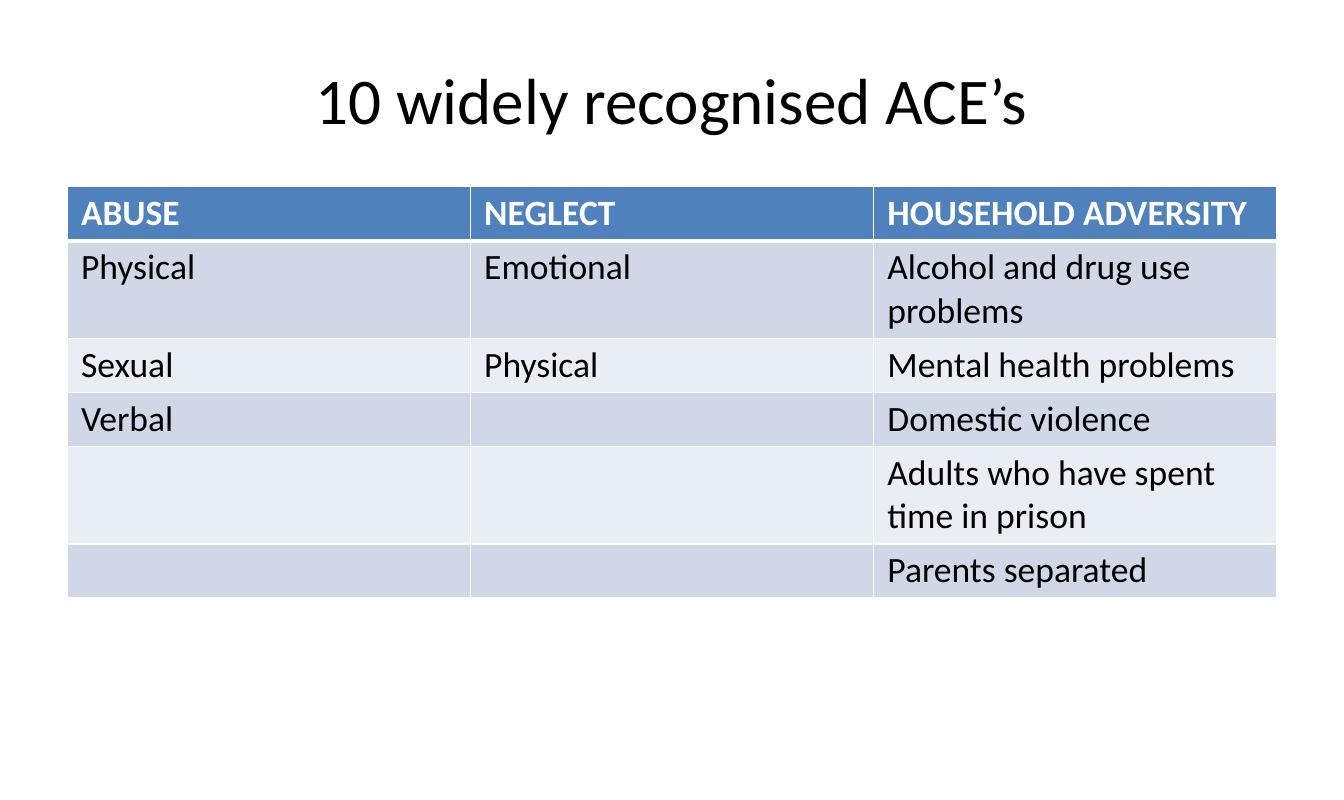
import pptx
import pptx.dml.color
import pptx.enum.text
import pptx.oxml
import pptx.oxml.ns
import pptx.util

PX = 9144  # 100 px to the inch
COLORS = {
    "white": "FFFFFF",
    "black": "000000",
    "header": "4F81BD",
    "odd row": "D0D8E8",
    "even row": "E9EDF4",
}
FONT = "Calibri"
ROW_HEIGHT = 41
ACES = [
    ["ABUSE", "NEGLECT", "HOUSEHOLD ADVERSITY"],
    ["Physical", "Emotional", "Alcohol and drug use problems"],
    ["Sexual", "Physical", "Mental health problems"],
    ["Verbal", "", "Domestic violence"],
    ["", "", "Adults who have spent time in prison"],
    ["", "", "Parents separated"],
]


def px(length):
    return pptx.util.Emu(length * PX)


def rgb(name):
    return pptx.dml.color.RGBColor.from_string(COLORS[name])


def set_font(paragraph, size, color, bold=False):
    paragraph.font.name = FONT
    paragraph.font.size = pptx.util.Pt(size)
    paragraph.font.bold = bold
    paragraph.font.color.rgb = rgb(color)


def add_title(slide, box, text):
    title = slide.shapes.title
    title.left, title.top, title.width, title.height = map(px, box)
    frame = title.text_frame
    frame.text = text
    frame.word_wrap = True
    frame.vertical_anchor = pptx.enum.text.MSO_ANCHOR.MIDDLE
    paragraph = frame.paragraphs[0]
    paragraph.alignment = pptx.enum.text.PP_ALIGN.CENTER
    set_font(paragraph, 44, "black")


def set_borders(cell, widths):
    """Draw white cell edges; must run before the cell is filled."""
    properties = cell._tc.get_or_add_tcPr()
    for side, width in widths.items():
        properties.append(pptx.oxml.parse_xml(
            f'<a:ln{side} {pptx.oxml.ns.nsdecls("a")} w="{pptx.util.Pt(width)}">'
            f'<a:solidFill><a:srgbClr val="{COLORS["white"]}"/></a:solidFill>'
            f'</a:ln{side}>'))


def format_cell(cell, text, row_index):
    is_header = row_index == 0
    cell.margin_left = cell.margin_right = px(13)
    cell.margin_top = cell.margin_bottom = px(5)
    set_borders(cell, {
        "L": 1,
        "R": 1,
        "T": 3 if row_index == 1 else 1,
        "B": 3 if is_header else 1,
    })
    band = "header" if is_header else "odd row" if row_index % 2 else "even row"
    cell.fill.solid()
    cell.fill.fore_color.rgb = rgb(band)
    cell.text = text
    set_font(cell.text_frame.paragraphs[0], 24,
             "white" if is_header else "black", is_header)


def add_ace_table(slide, box, rows):
    left, top, width, row_height = box
    table = slide.shapes.add_table(
        len(rows), len(rows[0]), px(left), px(top), px(width),
        px(row_height * len(rows))).table
    for row_index, texts in enumerate(rows):
        for column_index, text in enumerate(texts):
            format_cell(table.cell(row_index, column_index), text, row_index)


def main():
    deck = pptx.Presentation()
    deck.slide_width, deck.slide_height = px(1260), px(750)
    slide = deck.slides.add_slide(deck.slide_layouts.get_by_name("Title Only"))
    add_title(slide, (63, 30, 1134, 125), "10 widely recognised ACE’s")
    add_ace_table(slide, (63, 175, 1134, ROW_HEIGHT), ACES)
    deck.save("out.pptx")


if __name__ == "__main__":
    main()
